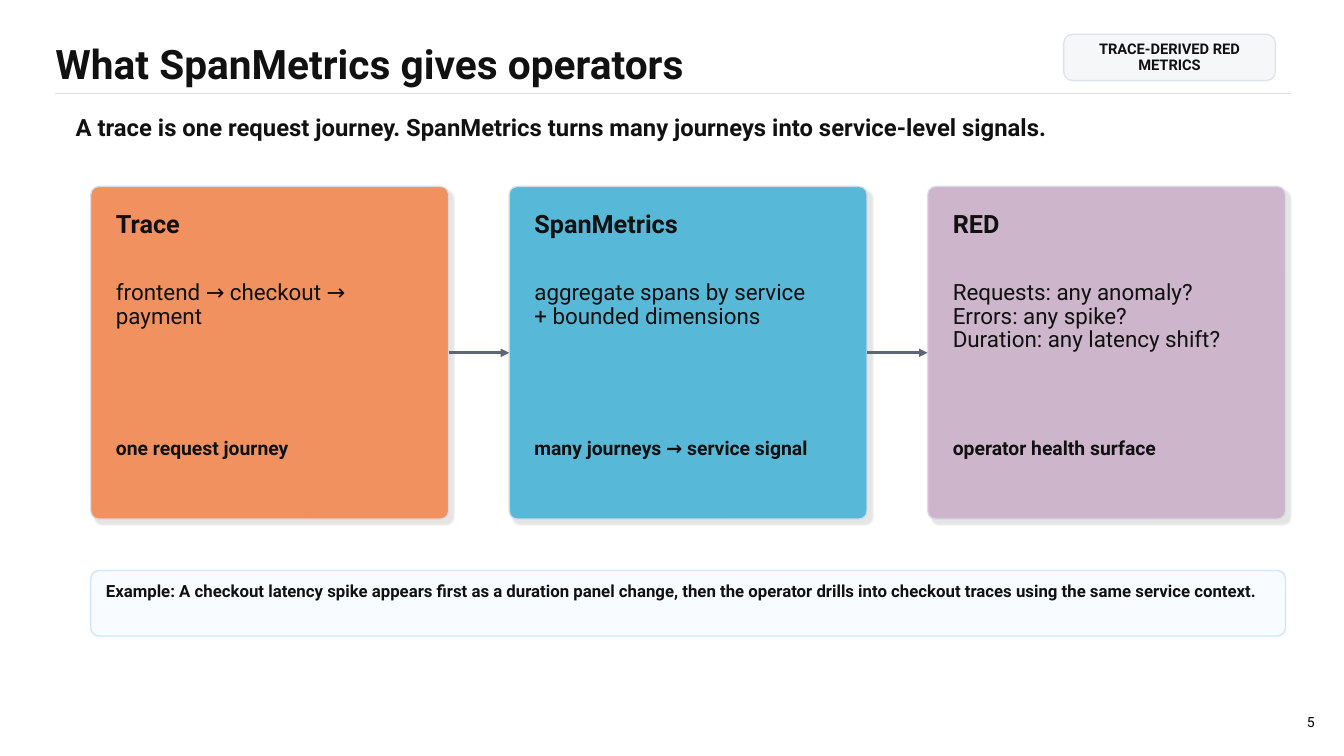
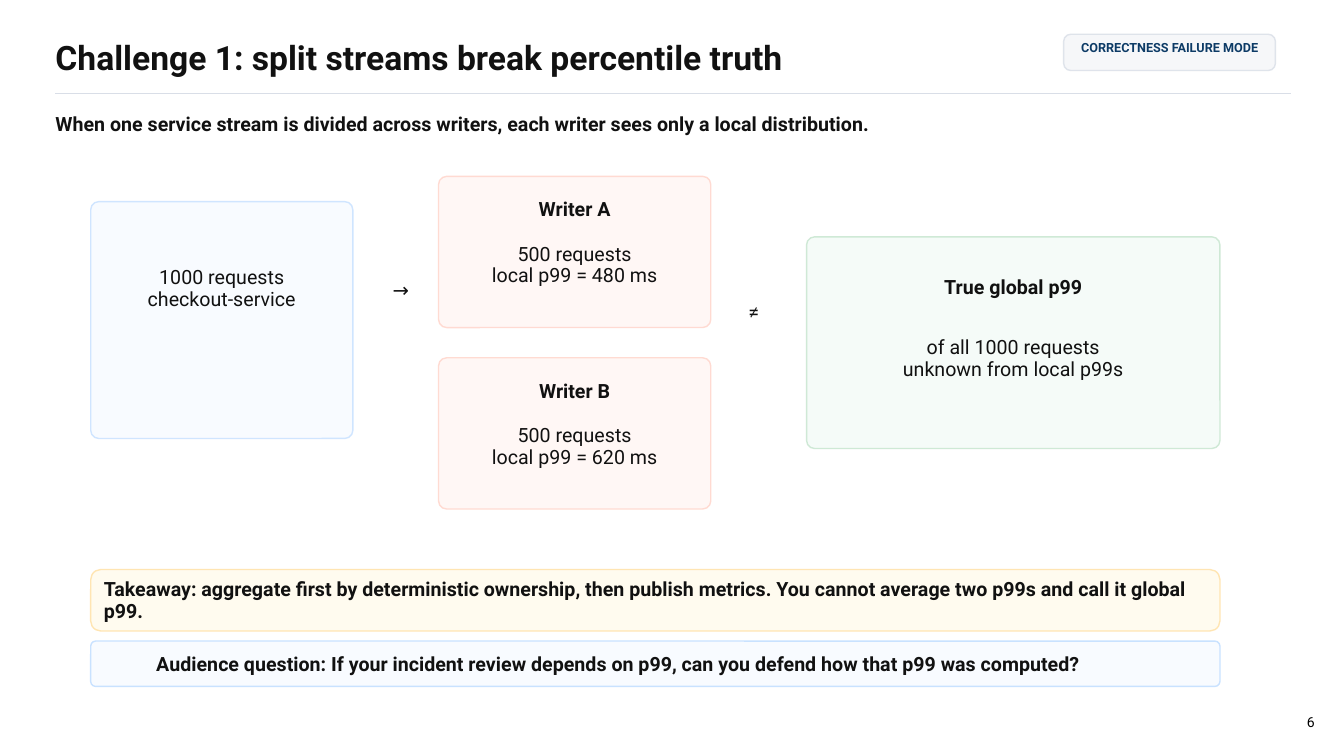
from dataclasses import dataclass

from lxml import etree
from pptx import Presentation
from pptx.dml.color import RGBColor
from pptx.enum.shapes import MSO_CONNECTOR, MSO_SHAPE
from pptx.enum.text import MSO_ANCHOR, MSO_AUTO_SIZE, PP_ALIGN
from pptx.oxml.ns import qn
from pptx.util import Inches, Pt

ROUNDED = MSO_SHAPE.ROUNDED_RECTANGLE
STRAIGHT = MSO_CONNECTOR.STRAIGHT
TOP, BOTTOM = MSO_ANCHOR.TOP, MSO_ANCHOR.BOTTOM
LEFT, CENTER, RIGHT = PP_ALIGN.LEFT, PP_ALIGN.CENTER, PP_ALIGN.RIGHT
NO_AUTOFIT = MSO_AUTO_SIZE.NONE
LEFT_SIDE, RIGHT_SIDE = 1, 3
TITLE_ONLY = 5


@dataclass(frozen=True)
class Theme:
    font: str = "Roboto"
    ink: str = "111111"
    black: str = "000000"
    navy: str = "0D3B66"
    rule: str = "D9DEE7"
    arrow: str = "5F6673"
    orange: str = "F19160"
    cyan: str = "58B8D8"
    mauve: str = "CDB5CC"
    badge: tuple = ("F6F7F9", "D9DEE7")
    blue: tuple = ("F8FBFF", "C9E2FF")
    red: tuple = ("FFF7F5", "FFD6CC")
    green: tuple = ("F5FBF8", "C8E6D0")
    yellow: tuple = ("FFFBEF", "FFE2A8")
    title: float = 29
    long_title: float = 24
    heading: float = 18
    lead: float = 17
    card: float = 16
    body: float = 14
    caption: float = 13.8
    example: float = 12
    badge_large: float = 10.5
    number: float = 10
    badge_small: float = 9
    spacing: float = 0.92
    tight: float = 0.87


THEME = Theme()


class Deck:
    def __init__(self, theme):
        self.theme = theme
        self.presentation = Presentation()
        self.presentation.slide_width = Inches(13.33)
        self.presentation.slide_height = Inches(7.5)
        self.slide = None

    def start(self, title, title_size, title_top, number):
        layout = self.presentation.slide_layouts[TITLE_ONLY]
        self.slide = self.presentation.slides.add_slide(layout)
        placeholder = self.slide.shapes.title
        placeholder.left, placeholder.top = Inches(0.55), Inches(title_top)
        placeholder.width, placeholder.height = Inches(9.7), Inches(0.45)
        self.set_text(placeholder, title, title_size, bold=True)
        self.line(0.55, 0.93, 12.8, 0.93, self.theme.rule, 1)
        self.text(str(number), 12.72, 6.93, 0.32, 0.32, self.theme.number,
                  align=RIGHT, anchor=BOTTOM, color=self.theme.black, spacing=1)

    def set_text(self, shape, text, size, bold=False, align=LEFT, anchor=TOP,
                 color=None, spacing=None):
        frame = shape.text_frame
        frame.word_wrap = True
        frame.auto_size = NO_AUTOFIT
        frame.vertical_anchor = anchor
        frame.margin_left = frame.margin_right = 0
        frame.margin_top = frame.margin_bottom = 0
        frame.text = text
        for paragraph in frame.paragraphs:
            paragraph.alignment = align
            paragraph.line_spacing = spacing or self.theme.spacing
            paragraph.font.name = self.theme.font
            paragraph.font.size = Pt(size)
            paragraph.font.bold = bold
            paragraph.font.color.rgb = RGBColor.from_string(color or self.theme.ink)

    def text(self, text, left, top, width, height, size, **style):
        shape = self.slide.shapes.add_textbox(
            Inches(left), Inches(top), Inches(width), Inches(height))
        self.set_text(shape, text, size, **style)

    def panel(self, left, top, width, height, colors, radius=0.08, opacity=85,
              shadow=False):
        shape = self.slide.shapes.add_shape(
            ROUNDED, Inches(left), Inches(top), Inches(width), Inches(height))
        shape.adjustments[0] = radius / min(width, height)
        fill, outline = colors
        shape.fill.solid()
        shape.fill.fore_color.rgb = RGBColor.from_string(fill)
        shape.line.color.rgb = RGBColor.from_string(outline)
        shape.line.width = Pt(1)
        shape.shadow.inherit = False
        properties = shape.element.spPr
        outline_color = properties.find(qn("a:ln")).find(".//" + qn("a:srgbClr"))
        self.set_opacity(outline_color, opacity)
        if shadow:
            outer = etree.SubElement(
                properties.find(qn("a:effectLst")), qn("a:outerShdw"),
                blurRad=str(Pt(1)), dist=str(Pt(4)), dir=str(45 * 60000),
                algn="tl", rotWithShape="0")
            shadow_color = etree.SubElement(outer, qn("a:srgbClr"), val=self.theme.black)
            self.set_opacity(shadow_color, 10)
        return shape

    def set_opacity(self, color, percent):
        etree.SubElement(color, qn("a:alpha"), val=str(percent * 1000))

    def line(self, left, top, right, bottom, color, width):
        connector = self.slide.shapes.add_connector(
            STRAIGHT, Inches(left), Inches(top), Inches(right), Inches(bottom))
        connector.line.color.rgb = RGBColor.from_string(color)
        connector.line.width = Pt(width)
        etree.SubElement(connector.element.spPr, qn("a:effectLst"))
        return connector

    def arrow(self, source, target):
        connector = self.line(0, 0, 1, 1, self.theme.arrow, 2)
        connector.begin_connect(source, RIGHT_SIDE)
        connector.end_connect(target, LEFT_SIDE)
        outline = connector.element.spPr.find(qn("a:ln"))
        etree.SubElement(outline, qn("a:tailEnd"), type="triangle")

    def badge(self, text, height, text_height, size, color):
        self.panel(10.55, 0.34, 2.1, height, self.theme.badge,
                   radius=0.194 * height, opacity=80)
        self.text(text, 10.65, 0.41, 1.9, text_height, size, bold=True,
                  align=CENTER, color=color)

    def card(self, left, color, heading, body, caption):
        theme = self.theme
        shape = self.panel(left, 1.85, 3.55, 3.3, (color, theme.rule), shadow=True)
        inner = left + 0.25
        self.text(heading, inner, 2.1, 3.05, 0.35, theme.heading, bold=True)
        self.text(body, inner, 2.8, 3.05, 1.1, theme.card, spacing=theme.tight)
        self.text(caption, inner, 4.35, 3.05, 0.34, theme.caption, bold=True)
        return shape

    def label(self, text, left, top, width, height, bold=False):
        self.text(text, left, top, width, height, self.theme.body,
                  bold=bold, align=CENTER)


def build_overview(deck):
    deck.start("What SpanMetrics gives operators", THEME.title, 0.43, 5)
    deck.badge("TRACE-DERIVED RED METRICS", 0.46, 0.25, THEME.badge_large, THEME.ink)
    deck.text("A trace is one request journey. SpanMetrics turns many journeys "
              "into service-level signals.",
              0.75, 1.15, 11.8, 0.34, THEME.lead, bold=True)
    contents = [
        (THEME.orange, "Trace", "frontend → checkout → payment", "one request journey"),
        (THEME.cyan, "SpanMetrics", "aggregate spans by service\n+ bounded dimensions",
         "many journeys → service signal"),
        (THEME.mauve, "RED",
         "Requests: any anomaly?\nErrors: any spike?\nDuration: any latency shift?",
         "operator health surface"),
    ]
    cards = [deck.card(0.9 + 4.15 * index, *content)
             for index, content in enumerate(contents)]
    for source, target in zip(cards, cards[1:]):
        deck.arrow(source, target)
    deck.panel(0.9, 5.66, 11.85, 0.65, THEME.blue)
    deck.text("Example: A checkout latency spike appears first as a duration panel "
              "change, then the operator drills into checkout traces using the same "
              "service context.", 1.05, 5.78, 11.5, 0.4, THEME.example, bold=True)


def build_challenge(deck):
    deck.start("Challenge 1: split streams break percentile truth",
               THEME.long_title, 0.41, 6)
    deck.badge("CORRECTNESS FAILURE MODE", 0.36, 0.22, THEME.badge_small, THEME.navy)
    deck.text("When one service stream is divided across writers, each writer sees "
              "only a local distribution.",
              0.55, 1.13, 11.8, 0.3, THEME.body, bold=True)
    deck.panel(0.9, 2, 2.6, 2.35, THEME.blue)
    deck.label("1000 requests\ncheckout-service", 1.15, 2.65, 2.1, 0.65)
    deck.label("→", 3.75, 2.78, 0.45, 0.4)
    for top, writer, latency in ((1.75, "A", 480), (3.55, "B", 620)):
        deck.panel(4.35, top, 2.7, 1.5, THEME.red)
        deck.label(f"Writer {writer}", 4.6, top + 0.23, 2.2, 0.25, bold=True)
        deck.label(f"500 requests\nlocal p99 = {latency} ms", 4.6, top + 0.67, 2.2, 0.48)
    deck.label("≠", 7.25, 3, 0.45, 0.4)
    deck.panel(8, 2.35, 4.1, 2.1, THEME.green)
    deck.label("True global p99", 8.3, 2.75, 3.5, 0.3, bold=True)
    deck.label("of all 1000 requests\nunknown from local p99s", 8.3, 3.35, 3.5, 0.6)
    deck.panel(0.9, 5.65, 11.2, 0.61, THEME.yellow, radius=0.1)
    deck.text("Takeaway: aggregate first by deterministic ownership, then publish "
              "metrics. You cannot average two p99s and call it global p99.",
              1.03, 5.75, 11.07, 0.4, THEME.body, bold=True)
    deck.panel(0.9, 6.36, 11.2, 0.45, THEME.blue, radius=0.05, opacity=100)
    deck.text("Audience question: If your incident review depends on p99, can you "
              "defend how that p99 was computed?",
              1.55, 6.49, 11.4, 0.16, THEME.body, bold=True)


def main():
    deck = Deck(THEME)
    build_overview(deck)
    build_challenge(deck)
    deck.presentation.save("out.pptx")


if __name__ == "__main__":
    main()
